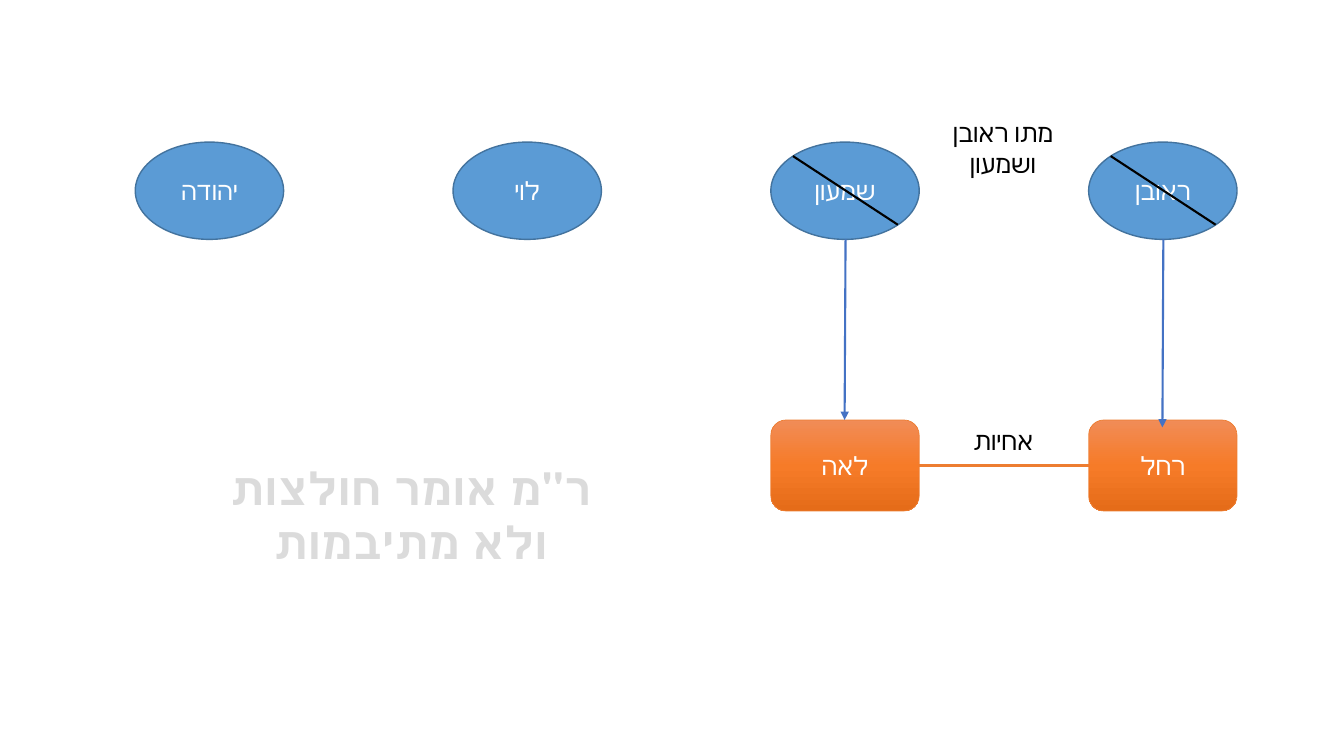
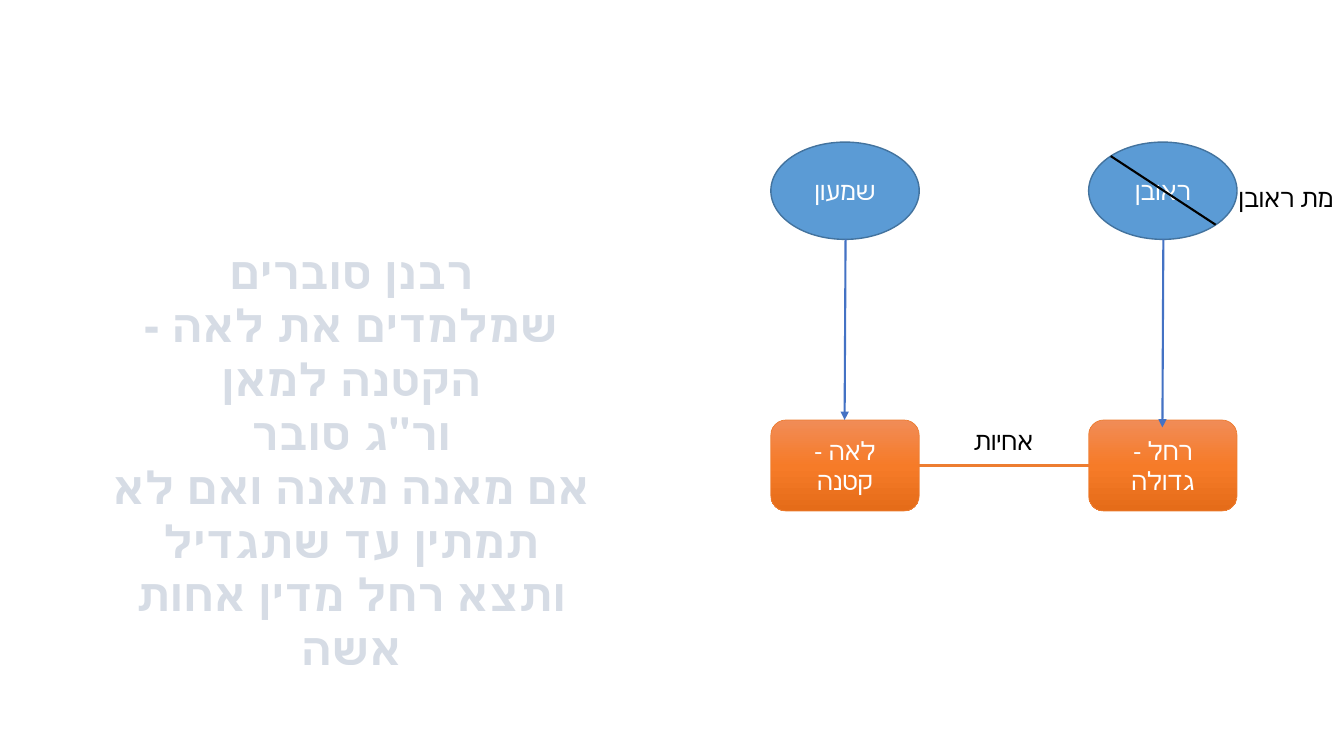
from copy import deepcopy

from lxml import etree
from pptx import Presentation
from pptx.dml.color import RGBColor
from pptx.enum import shapes, text
from pptx.oxml import ns
from pptx.util import Pt

INK = {
    "man": "5B9BD5", "rim": "43739E", "wife": "ED7D31", "arrow": "4472C4",
    "white": "FFFFFF", "black": "000000", "gray": "DBDBDB", "pale": "D6DCE5",
}
GLOW = ["F18C57", "F67B28", "E56C19"]
FONT = "Calibri"

# Family grid: columns run from right to left
RIGHT, STEP, WIDE = 777.6, 227, 106
MAN_Y, MAN_H = 101.5, 69.5
WIFE_Y, WIFE_H = 300, 65


def rgb(key):
    return RGBColor.from_string(INK.get(key, key))


def left(col):
    return RIGHT - STEP * col


class Deck:
    def __init__(self):
        self.prs = Presentation()
        self.prs.slide_width, self.prs.slide_height = Pt(960), Pt(540)
        self.page = None

    def new(self):
        self.page = self.prs.slides.add_slide(self.prs.slide_layouts[6]).shapes

    def letter(self, frame, words, ink, size=18, bold=False, center=True):
        frame.text = words
        for para in frame.paragraphs:
            if center:
                para.alignment = text.PP_ALIGN.CENTER
            para.font.name, para.font.size = FONT, Pt(size)
            para.font.bold = bold
            para.font.color.rgb = rgb(ink)
            para._p.get_or_add_pPr().set("rtl", "1")

    def node(self, kind, x, y, high, words, rim, thick):
        box = self.page.add_shape(kind, Pt(x), Pt(y), Pt(WIDE), Pt(high))
        box.shadow.inherit = False
        box.line.color.rgb, box.line.width = rgb(rim), Pt(thick)
        box.text_frame.vertical_anchor = text.MSO_ANCHOR.MIDDLE
        self.letter(box.text_frame, words, "white")
        return box

    def man(self, col, name, dead=False):
        x = left(col)
        oval = self.node(shapes.MSO_SHAPE.OVAL, x, MAN_Y, MAN_H, name, "rim", 1)
        oval.fill.solid()
        oval.fill.fore_color.rgb = rgb("man")
        if dead:
            self.line(x + 15.8, MAN_Y + 10, x + 90.7, MAN_Y + 59, "black")

    def wife(self, col, name):
        box = self.node(shapes.MSO_SHAPE.ROUNDED_RECTANGLE, left(col), WIFE_Y,
                        WIFE_H, name, "wife", 0.5)
        box.fill.gradient()
        box.fill.gradient_angle = 270
        # Add a third stop to the two given ones
        first = box._element.spPr.find(".//" + ns.qn("a:gs"))
        first.addnext(deepcopy(first))
        for i, (stop, ink) in enumerate(zip(box.fill.gradient_stops, GLOW)):
            stop.color.rgb, stop.position = rgb(ink), i / 2

    def line(self, x1, y1, x2, y2, ink, head=False):
        bar = self.page.add_connector(shapes.MSO_CONNECTOR.STRAIGHT,
                                      Pt(x1), Pt(y1), Pt(x2), Pt(y2))
        bar.line.color.rgb, bar.line.width = rgb(ink), Pt(1.5)
        if head:
            tip = etree.SubElement(bar.line._get_or_add_ln(), ns.qn("a:tailEnd"))
            tip.set("type", "triangle")
        etree.SubElement(bar._element.spPr, ns.qn("a:effectLst"))

    def label(self, x, y, wide, high, words, ink="black", wrap=True, **style):
        box = self.page.add_textbox(Pt(x), Pt(y), Pt(wide), Pt(high))
        box.text_frame.word_wrap = wrap
        box.text_frame.auto_size = text.MSO_AUTO_SIZE.SHAPE_TO_FIT_TEXT
        self.letter(box.text_frame, words, ink, **style)

    def ruling(self, x, y, wide, high, words, ink):
        self.label(x, y, wide, high, words, ink, size=32, bold=True)

    def family(self, men, dead, wives):
        """Brothers above, with two sisters married to the first two."""
        for col, name in enumerate(men):
            self.man(col, name, col in dead)
        for col, name in enumerate(wives):
            self.wife(col, name)
        for col, end in enumerate((305.3, WIFE_Y)):
            mid = left(col) + WIDE / 2
            self.line(mid + 0.4, MAN_Y + MAN_H, mid - 0.3, end, "arrow", True)
        mid = WIFE_Y + WIFE_H / 2
        self.line(left(1) + WIDE, mid, RIGHT, mid, "wife")
        self.label(679.7, WIFE_Y, 74.2, 28.8, "אחיות")


def main():
    deck = Deck()

    # Slide 1: two brothers died
    deck.new()
    deck.family(["ראובן", "שמעון", "לוי", "יהודה"], {0, 1}, ["רחל", "לאה"])
    deck.label(648.7, 80.6, 135.4, 28.8, "מתו ראובן ושמעון")
    deck.ruling(157, 325.4, 272.9, 85, "ר''מ אומר חולצות ולא מתיבמות", "gray")

    # Slide 2: one brother died, the younger sister is a minor
    deck.new()
    deck.family(["ראובן", "שמעון"], {0}, ["רחל - גדולה", "לאה - קטנה"])
    deck.label(877.7, 126.7, 82.3, 28.8, "מת ראובן", wrap=False, center=False)
    deck.ruling(72, 171, 357.8, 278.6, "\n".join([
        "רבנן סוברים",
        "שמלמדים את לאה - הקטנה למאן",
        "ור''ג סובר",
        "אם מאנה מאנה ואם לא תמתין עד שתגדיל ותצא רחל מדין אחות אשה",
    ]), "pale")

    deck.prs.save("out.pptx")


if __name__ == "__main__":
    main()
